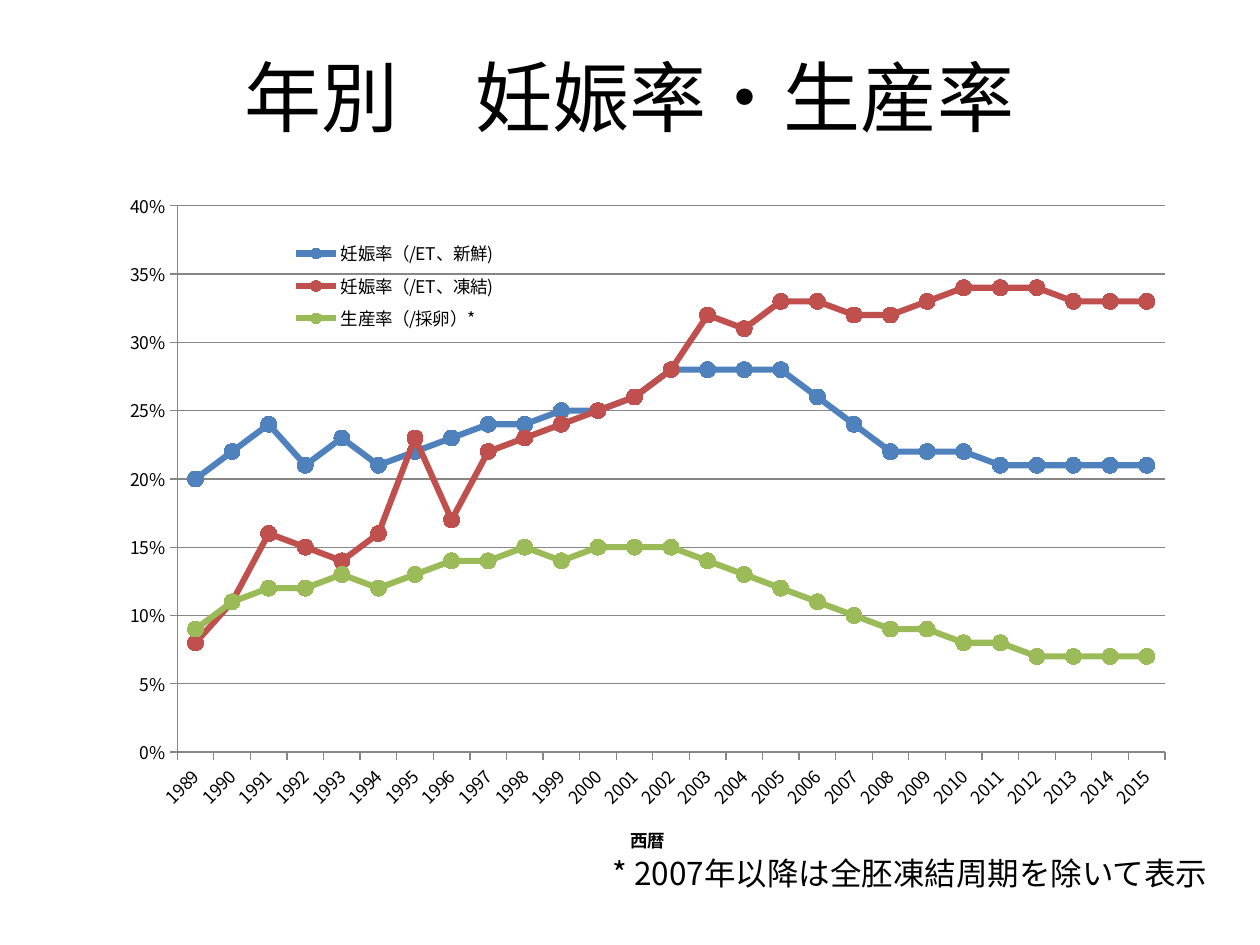
from lxml.etree import SubElement
from pptx import Presentation
from pptx.chart.data import CategoryChartData
from pptx.dml.color import RGBColor
from pptx.enum.chart import XL_CHART_TYPE as ChartType, XL_LEGEND_POSITION as LegendPosition
from pptx.enum.chart import XL_MARKER_STYLE as MarkerStyle, XL_TICK_MARK as TickMark
from pptx.enum.text import MSO_ANCHOR as Anchor, PP_ALIGN as Align
from pptx.oxml.ns import qn
from pptx.util import Pt

# Content
TITLE = "年別\u3000妊娠率・生産率".replace("\u3000", "　")
NOTE = "* 2007年以降は全胚凍結周期を除いて表示"
AXIS_TITLE = "西暦"
YEARS = [str(year) for year in range(1989, 2016)]
SERIES = [  # name, colour, percent per year
    ("妊娠率（/ET、新鮮)", "fresh",
     [20, 22, 24, 21, 23, 21, 22, 23, 24, 24, 25, 25, 26, 28,
      28, 28, 28, 26, 24, 22, 22, 22, 21, 21, 21, 21, 21]),
    ("妊娠率（/ET、凍結)", "frozen",
     [8, 11, 16, 15, 14, 16, 23, 17, 22, 23, 24, 25, 26, 28,
      32, 31, 33, 33, 32, 32, 33, 34, 34, 34, 33, 33, 33]),
    ("生産率（/採卵）*", "birth",
     [9, 11, 12, 12, 13, 12, 13, 14, 14, 15, 14, 15, 15, 15,
      14, 13, 12, 11, 10, 9, 9, 8, 8, 7, 7, 7, 7]),
]

# Look
FONT = "Noto Sans CJK JP"
COLORS = {"text": "000000", "grid": "868686",
          "fresh": "4F81BD", "frozen": "C0504D", "birth": "9BBB59"}
PX = 914400 // 126
BOXES = {"title": (63, 38, 1134, 115), "chart": (42, 164, 1176, 697),
         "note": (600, 848, 629, 50)}
PLOT_LAYOUT = {"x": 0.115, "y": 0.06, "w": 0.84, "h": 0.784}
LEGEND_LAYOUT = {"x": 0.2, "y": 0.1, "w": 0.2, "h": 0.15}


def emu(box):
    return [value * PX for value in box]


def color(name):
    return RGBColor.from_string(COLORS[name])


def set_font(font, size, bold=False):
    for key, value in {"name": FONT, "size": Pt(size), "bold": bold}.items():
        setattr(font, key, value)
    font.color.rgb = color("text")


def set_line(line, name, width):
    line.color.rgb = color(name)
    line.width = Pt(width)


def set_layout(parent, index, fractions, inner=False):
    for old in parent.findall(qn("c:layout")):
        parent.remove(old)
    layout = SubElement(parent, qn("c:layout"))
    parent.insert(index, layout)
    manual = SubElement(layout, qn("c:manualLayout"))
    if inner:
        SubElement(manual, qn("c:layoutTarget")).set("val", "inner")
    for key in "xy":
        SubElement(manual, qn(f"c:{key}Mode")).set("val", "edge")
    for key, value in fractions.items():
        SubElement(manual, qn(f"c:{key}")).set("val", str(value))


def use_font_for_japanese(root):
    for latin in list(root.iter(qn("a:latin"))):
        east_asian = SubElement(latin.getparent(), qn("a:ea"))
        east_asian.set("typeface", FONT)
        latin.addnext(east_asian)


presentation = Presentation()
presentation.slide_width, presentation.slide_height = 1260 * PX, 945 * PX
slide = presentation.slides.add_slide(presentation.slide_layouts[5])

# Title
title = slide.shapes.title
title.left, title.top, title.width, title.height = emu(BOXES["title"])
title.text_frame.text = TITLE
title.text_frame.vertical_anchor = Anchor.MIDDLE
paragraph = title.text_frame.paragraphs[0]
paragraph.alignment = Align.CENTER
set_font(paragraph.runs[0].font, 44)

# Chart
data = CategoryChartData(number_format="0%")
data.categories = YEARS
for name, _, percents in SERIES:
    data.add_series(name, [percent / 100 for percent in percents])
chart = slide.shapes.add_chart(ChartType.LINE_MARKERS, *emu(BOXES["chart"]), data).chart
chart.has_title = False
set_font(chart.font, 10)

for series, (_, name, _) in zip(chart.plots[0].series, SERIES):
    series.smooth = False
    set_line(series.format.line, name, 3.5)
    marker = series.marker
    marker.style, marker.size = MarkerStyle.CIRCLE, 9
    marker.format.fill.solid()
    marker.format.fill.fore_color.rgb = color(name)
    set_line(marker.format.line, name, 0.75)

# Axes
years, rates = chart.category_axis, chart.value_axis
for axis in (years, rates):
    axis.major_tick_mark, axis.minor_tick_mark = TickMark.OUTSIDE, TickMark.NONE
    set_line(axis.format.line, "grid", 0.75)
    set_font(axis.tick_labels.font, 10)
rates.minimum_scale, rates.maximum_scale, rates.major_unit = 0, 0.4, 0.05
rates.tick_labels.number_format = "0%"
rates.tick_labels.number_format_is_linked = False
rates.has_major_gridlines = True
set_line(rates.major_gridlines.format.line, "grid", 0.75)
axis_text = years.axis_title.text_frame
axis_text.text = AXIS_TITLE
set_font(axis_text.paragraphs[0].runs[0].font, 10, bold=True)

# Legend and manual layout
chart.has_legend = True
chart.legend.position = LegendPosition.RIGHT
chart.legend.include_in_layout = False
set_font(chart.legend.font, 10)
root = chart.element
root.find(".//" + "/".join(map(qn, ("c:catAx", "c:txPr", "a:bodyPr")))).set("rot", "-2700000")
set_layout(root.find(".//" + qn("c:plotArea")), 0, PLOT_LAYOUT, inner=True)
set_layout(root.find(".//" + qn("c:legend")), 1, LEGEND_LAYOUT)

# Note
note = slide.shapes.add_textbox(*emu(BOXES["note"])).text_frame
note.word_wrap = False
note.text = NOTE
set_font(note.paragraphs[0].runs[0].font, 18)

for element in (slide.element, root):
    use_font_for_japanese(element)
presentation.save("out.pptx")
